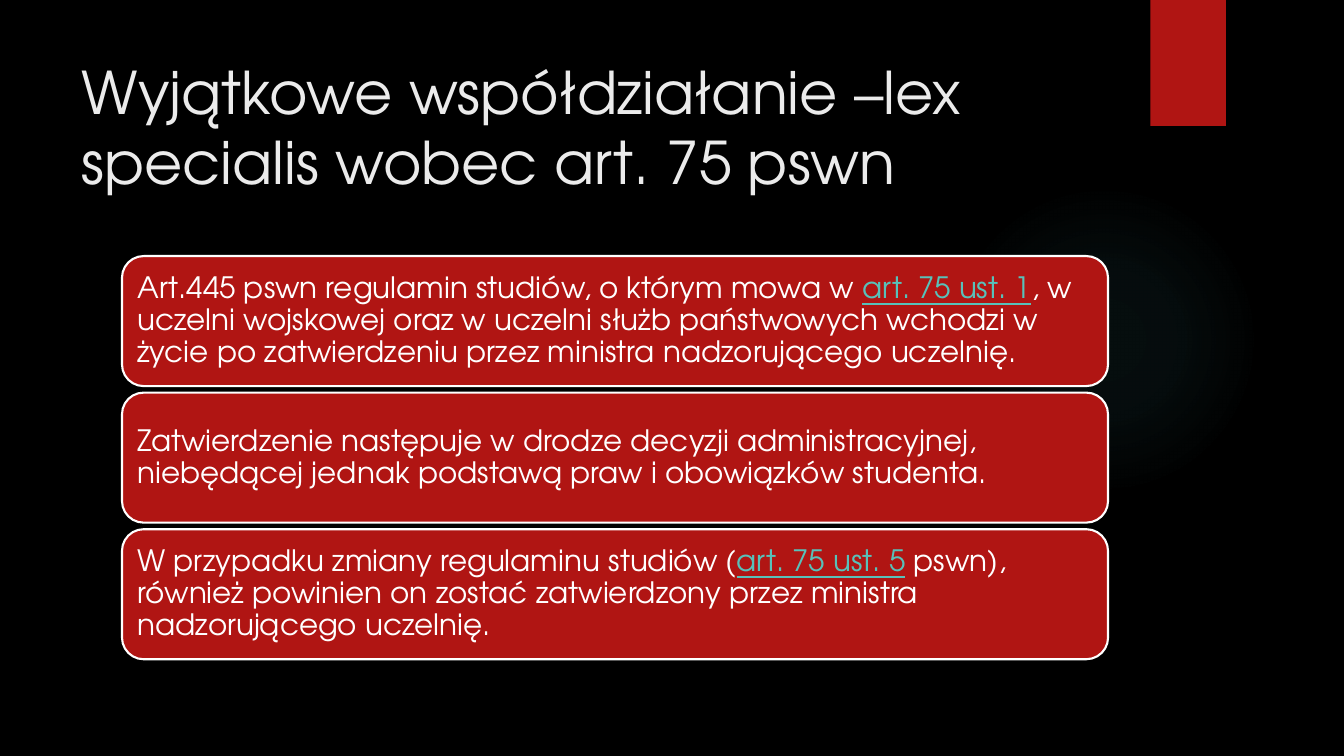
from dataclasses import dataclass

from lxml import etree
from pptx import Presentation
from pptx import util as u
from pptx.dml.color import RGBColor
from pptx.enum import shapes, text
from pptx.oxml import ns, parse_xml

SLIDE_W, SLIDE_H = 13.33, 7.5
FONT = "TeX Gyre Adventor"
BLACK, RED, WHITE = "000000", "B01513", "FFFFFF"
TITLE_GREY, LINK_TEAL, GLOW_TEAL = "EBEBEB", "58C1BA", "50B9C1"

# Provision cards: one column, equal rows
CARD_LEFT, CARD_TOP = 1.21, 2.54
CARD_W, CARD_H = 9.78, 1.29
CARD_PITCH = 1.355


@dataclass(frozen=True)
class Area:
    left: float
    top: float
    width: float
    height: float

    def emu(self) -> tuple[int, ...]:
        return tuple(u.Inches(v) for v in (self.left, self.top, self.width, self.height))


@dataclass(frozen=True)
class Provision:
    before: str
    reference: str = ""
    after: str = ""


PROVISIONS = [
    Provision(
        "Art.445 pswn regulamin studiów, o którym mowa w ",
        "art. 75 ust. 1",
        ", w uczelni wojskowej oraz w uczelni służb państwowych wchodzi w życie "
        "po zatwierdzeniu przez ministra nadzorującego uczelnię.",
    ),
    Provision(
        "Zatwierdzenie następuje w drodze decyzji administracyjnej, "
        "niebędącej jednak podstawą praw i obowiązków studenta."
    ),
    Provision(
        "W przypadku zmiany regulaminu studiów (",
        "art. 75 ust. 5",
        " pswn), również powinien on zostać zatwierdzony przez ministra "
        "nadzorującego uczelnię.",
    ),
]


def rgb(value: str) -> RGBColor:
    return RGBColor.from_string(value)


def add_text(paragraph, words: str, *, size: float, color: str, underline: bool = False) -> None:
    run = paragraph.add_run()
    run.text = words
    run.font.name = FONT
    run.font.size = u.Pt(size)
    run.font.color.rgb = rgb(color)
    run.font.underline = underline


def set_frame(frame, anchor, inset_x: float, inset_y: float) -> None:
    frame.word_wrap = True
    frame.auto_size = text.MSO_AUTO_SIZE.NONE
    frame.vertical_anchor = anchor
    frame.margin_left = frame.margin_right = u.Inches(inset_x)
    frame.margin_top = frame.margin_bottom = u.Inches(inset_y)


def add_block(slide, preset, area: Area, fill: str, line: str = ""):
    block = slide.shapes.add_shape(preset, *area.emu())
    block.shadow.inherit = False
    block.fill.solid()
    block.fill.fore_color.rgb = rgb(fill)
    if line:
        block.line.color.rgb = rgb(line)
        block.line.width = u.Pt(1.5)
    else:
        block.line.fill.background()
    return block


def add_glow(slide, area: Area) -> None:
    glow = add_block(slide, shapes.MSO_SHAPE.OVAL, area, GLOW_TEAL)
    stops = "".join(
        f'<a:gs pos="{pos * 1000}"><a:srgbClr val="{GLOW_TEAL}">'
        f'<a:alpha val="{alpha * 1000}"/></a:srgbClr></a:gs>'
        for pos, alpha in ((0, 7), (36, 6), (69, 0), (100, 0))
    )
    gradient: etree._Element = parse_xml(
        f'<a:gradFill {ns.nsdecls("a")} rotWithShape="1"><a:gsLst>{stops}</a:gsLst>'
        '<a:path path="circle"><a:fillToRect l="50000" t="50000" r="50000" b="50000"/>'
        "</a:path></a:gradFill>"
    )
    properties = glow._element.spPr
    properties.replace(properties.find(ns.qn("a:solidFill")), gradient)


def add_title(slide, area: Area, words: str) -> None:
    title = slide.shapes.title
    title.left, title.top, title.width, title.height = area.emu()
    set_frame(title.text_frame, text.MSO_ANCHOR.TOP, 0.1, 0.05)
    paragraph = title.text_frame.paragraphs[0]
    paragraph.alignment = text.PP_ALIGN.LEFT
    add_text(paragraph, words, size=42, color=TITLE_GREY)


def add_provision(slide, row: int, provision: Provision) -> None:
    area = Area(CARD_LEFT, CARD_TOP + row * CARD_PITCH, CARD_W, CARD_H)
    card = add_block(slide, shapes.MSO_SHAPE.ROUNDED_RECTANGLE, area, RED, WHITE)
    set_frame(card.text_frame, text.MSO_ANCHOR.MIDDLE, 0.09, 0.09)
    paragraph = card.text_frame.paragraphs[0]
    paragraph.alignment = text.PP_ALIGN.LEFT
    paragraph.line_spacing = 0.9
    add_text(paragraph, provision.before, size=21, color=WHITE)
    if provision.reference:
        add_text(paragraph, provision.reference, size=21, color=LINK_TEAL, underline=True)
        add_text(paragraph, provision.after, size=21, color=WHITE)


def main() -> None:
    deck = Presentation()
    deck.slide_width, deck.slide_height = u.Inches(SLIDE_W), u.Inches(SLIDE_H)
    slide = deck.slides.add_slide(deck.slide_layouts.get_by_name("Title Only"))
    slide.background.fill.solid()
    slide.background.fill.fore_color.rgb = rgb(BLACK)

    # Backdrop: soft glow and red tab
    add_glow(slide, Area(9.41, 1.83, 3.08, 3.08))
    add_block(slide, shapes.MSO_SHAPE.RECTANGLE, Area(11.41, 0, 0.75, SLIDE_H / 6), RED)

    # Title
    add_title(
        slide,
        Area(0.71, 0.5, 10.29, 1.53),
        "Wyjątkowe współdziałanie –lex specialis wobec art. 75 pswn",
    )

    # Provisions
    for row, provision in enumerate(PROVISIONS):
        add_provision(slide, row, provision)

    deck.save("out.pptx")


if __name__ == "__main__":
    main()
